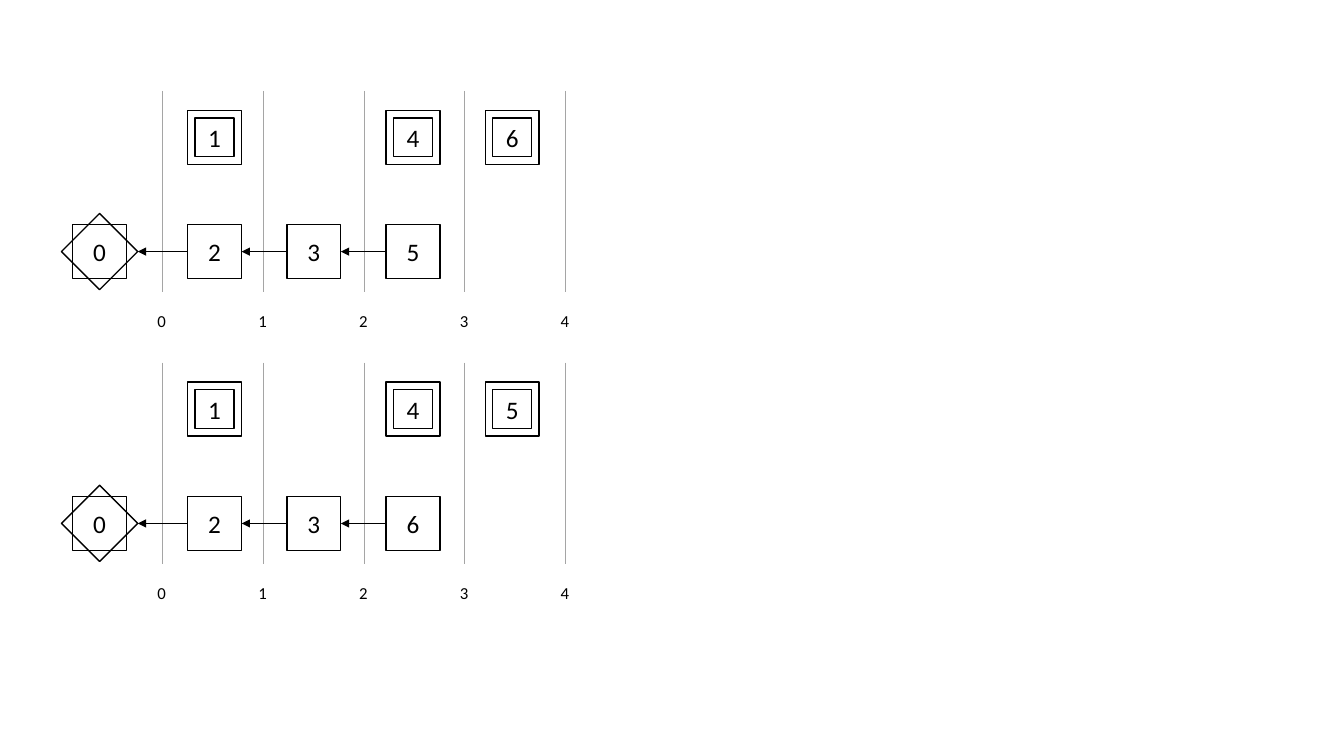
from math import sqrt

from lxml.etree import SubElement
from pptx import Presentation
from pptx.dml.color import RGBColor
from pptx.enum.shapes import MSO_CONNECTOR as Link, MSO_SHAPE as Form
from pptx.enum.text import MSO_ANCHOR as Anchor, MSO_AUTO_SIZE as Auto, PP_ALIGN as Align
from pptx.oxml.ns import qn
from pptx.util import Cm, Pt

# Each chain: the root, the linked blocks and the lone blocks by slot
CHAINS = [
    {"top": 2.29, "root": "0", "linked": ["2", "3", "5"], "lone": {0: "1", 2: "4", 3: "6"}},
    {"top": 9.14, "root": "0", "linked": ["2", "3", "6"], "lone": {0: "1", 2: "4", 3: "5"}},
]
TICKS = ["0", "1", "2", "3", "4"]

BLACK = RGBColor(0, 0, 0)
GREY = RGBColor(0xA5, 0xA5, 0xA5)
BLOCK_FONT = {"name": "Calibri", "size": Pt(18)}
TICK_FONT = {"name": "Calibri", "size": Pt(12)}

GRID_X, CELL = 4.09, 2.54
ROOT_X, SLOT_X, STEP = 1.83, 4.73, 2.5
SIDE, INSET = 1.36, 0.19
LONE_Y, LINK_Y, TICK_Y = 0.49, 3.37, 5.41
TICK_W, TICK_H = 0.74, 0.76


def write(frame, text, font):
    run = frame.paragraphs[0].add_run()
    run.text = text
    for key, val in font.items():
        setattr(run.font, key, val)
    run.font.color.rgb = BLACK


def square(host, x, y, side, text=None):
    box = host.add_shape(Form.RECTANGLE, Cm(x), Cm(y), Cm(side), Cm(side))
    box.shadow.inherit = False
    box.fill.background()
    box.line.color.rgb = BLACK
    box.line.width = Pt(1)
    if text:
        frame = box.text_frame
        frame.vertical_anchor = Anchor.MIDDLE
        frame.paragraphs[0].alignment = Align.CENTER
        write(frame, text, BLOCK_FONT)
    return box


def arrow(host, start, end, y):
    line = host.add_connector(Link.STRAIGHT, Cm(start), Cm(y), Cm(end), Cm(y))
    line.line.color.rgb = BLACK
    line.line.width = Pt(1)
    props = line._element.spPr
    SubElement(props.find(qn("a:ln")), qn("a:tailEnd"), type="triangle")
    SubElement(props, qn("a:effectLst"))


def border(cell):
    """Grey rules on the left and right of a cell, none above or below."""
    props = cell._tc.get_or_add_tcPr()
    for side in "LRTB":
        line = SubElement(props, qn(f"a:ln{side}"), w=str(Pt(0.5)))
        if side in "LR":
            fill = SubElement(line, qn("a:solidFill"))
            SubElement(fill, qn("a:srgbClr"), val=str(GREY))
        else:
            SubElement(line, qn("a:noFill"))
    cell.fill.background()


def grid(host, top):
    cols = len(TICKS) - 1
    table = host.add_table(2, cols, Cm(GRID_X), Cm(top), Cm(cols * CELL), Cm(2 * CELL)).table
    table.first_row = table.horz_banding = False
    for cell in table.iter_cells():
        border(cell)
    for i, tick in enumerate(TICKS):
        x = GRID_X + i * CELL - TICK_W / 2
        label = host.add_textbox(Cm(x), Cm(top + TICK_Y), Cm(TICK_W), Cm(TICK_H))
        label.text_frame.word_wrap = False
        label.text_frame.auto_size = Auto.SHAPE_TO_FIT_TEXT
        write(label.text_frame, tick, TICK_FONT)


def chain(host, top, root, linked, lone):
    grid(host, top)
    y = top + LINK_Y
    group = host.add_group_shape().shapes
    square(group, ROOT_X, y, SIDE, root)
    square(group, ROOT_X, y, SIDE).rotation = 45
    end = ROOT_X + SIDE / 2 * (1 + sqrt(2))
    for i, text in enumerate(linked):
        x = SLOT_X + i * STEP
        square(host, x, y, SIDE, text)
        arrow(host, x, end, y + SIDE / 2)
        end = x + SIDE
    for slot, text in lone.items():
        x, y = SLOT_X + slot * STEP, top + LONE_Y
        group = host.add_group_shape().shapes
        square(group, x, y, SIDE, text)
        square(group, x + INSET, y + INSET, SIDE - 2 * INSET)


def main():
    deck = Presentation()
    deck.slide_width, deck.slide_height = Cm(33.87), Cm(19.05)
    slide = deck.slides.add_slide(deck.slide_layouts[6])
    for item in CHAINS:
        chain(slide.shapes, **item)
    deck.save("out.pptx")


if __name__ == "__main__":
    main()
